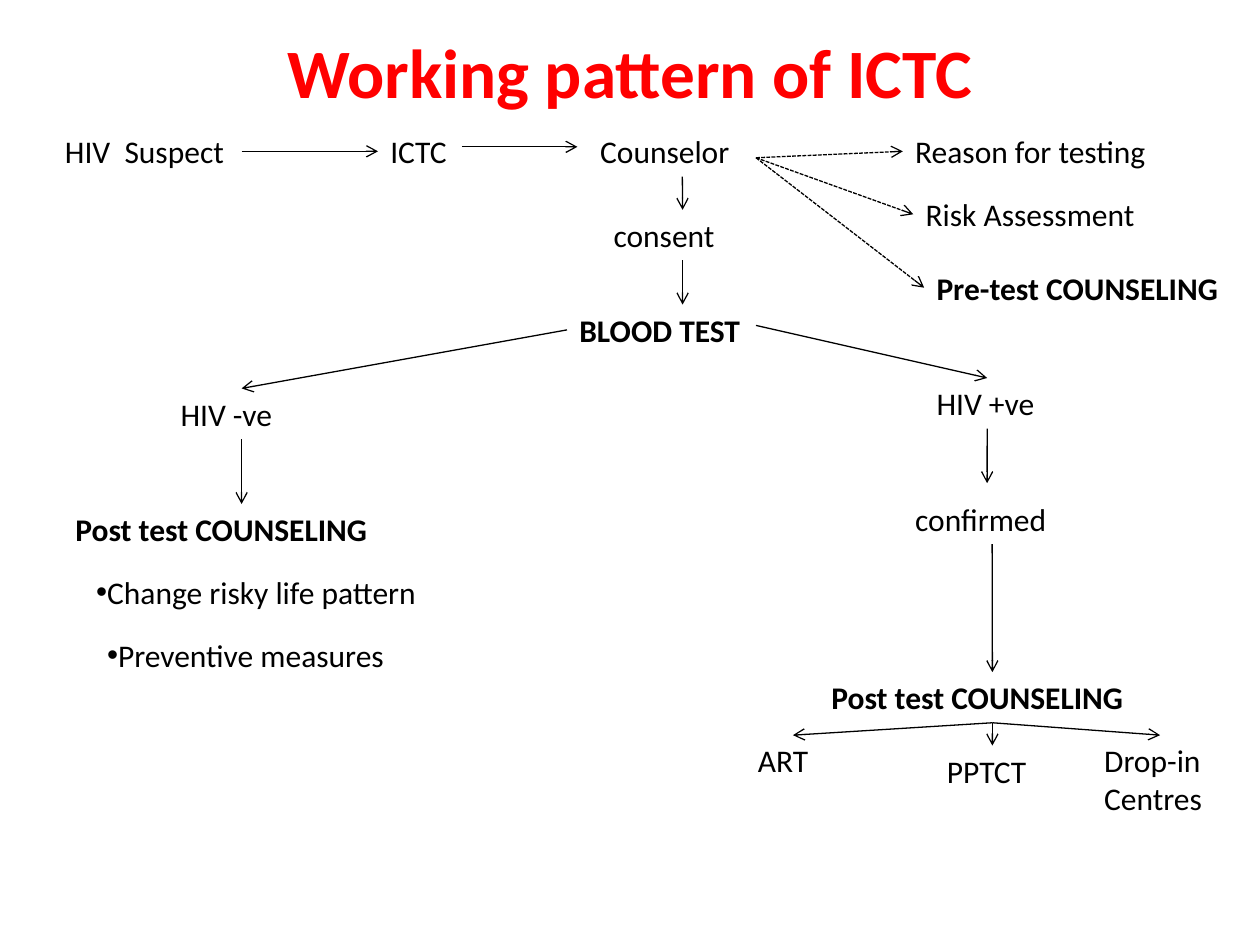
"""Build the flow chart slide on the working pattern of an ICTC."""
import pptx
import pptx.dml.color
import pptx.enum.dml
import pptx.enum.shapes
import pptx.enum.text
import pptx.oxml
import pptx.oxml.ns
import pptx.util

Cm = pptx.util.Cm
Pt = pptx.util.Pt
COLOURS = {"title": "FF0000", "ink": "000000"}
TOP, LEFT, BOTTOM, RIGHT = range(4)
STEP_HEIGHT = 1.02

TITLE = "Working pattern of ICTC"
STEPS = {
    "suspect": ("HIV  Suspect", 1.06, 2.54, 3.81),
    "ictc": ("ICTC", 7.62, 2.54, 2.12),
    "counselor": ("Counselor", 11.85, 2.54, 3.81),
    "reason": ("Reason for testing", 18.2, 2.54, 5.93),
    "risk": ("Risk Assessment", 18.41, 3.81, 6.14),
    "pretest": ("Pre-test COUNSELING", 18.63, 5.29, 6.77),
    "consent": ("consent", 12.12, 4.23, 3.28),
    "blood": ("BLOOD TEST", 11.43, 6.14, 4.66),
    "negative": ("HIV -ve", 3.39, 7.83, 2.96),
    "negative advice": ("Post test COUNSELING", 1.27, 10.16, 7.2),
    "change": ("Change risky life pattern", 1.69, 11.43, 6.99),
    "prevention": ("Preventive measures", 1.91, 12.7, 6.99),
    "positive": ("HIV +ve", 18.63, 7.62, 2.54),
    "confirmed": ("confirmed", 18.2, 9.95, 3.6),
    "positive advice": ("Post test COUNSELING", 16.51, 13.55, 6.99),
    "art": ("ART", 15.03, 14.82, 1.91),
    "pptct": ("PPTCT", 18.84, 15.03, 2.33),
    "centres": ("Drop-in Centres", 22.01, 14.82, 2.75),
}
BOLD = {"pretest", "blood", "negative advice", "positive advice"}
BULLETED = {"change", "prevention"}
HEIGHTS = {"centres": 1.8}

FAN_START = (15.24, 3.18)
SOLID_ARROWS = [
    (("suspect", RIGHT), ("ictc", LEFT)),
    ((9.31, 2.96), (11.64, 2.96)),
    (("counselor", BOTTOM), ("consent", TOP)),
    (("consent", BOTTOM), ("blood", TOP)),
    (("blood", LEFT), ("negative", TOP)),
    ((15.24, 6.56), ("positive", TOP)),
    (("negative", BOTTOM), ("negative advice", TOP)),
    (("positive", BOTTOM), (19.9, 9.74)),
    (("confirmed", BOTTOM), ("positive advice", TOP)),
] + [(("positive advice", BOTTOM), (service, TOP)) for service in ("pptct", "art", "centres")]
DASHED_ARROWS = [(FAN_START, (topic, LEFT)) for topic in ("reason", "risk", "pretest")]


def write(frame, text, colour, **font_format):
    """Put one formatted paragraph in a text frame and return it."""
    frame.word_wrap = True
    paragraph = frame.paragraphs[0]
    run = paragraph.add_run()
    run.text = text
    for attribute, value in {"name": "Calibri", **font_format}.items():
        setattr(run.font, attribute, value)
    run.font.color.rgb = pptx.dml.color.RGBColor.from_string(COLOURS[colour])
    return paragraph


def add_step(slide, key):
    """Add the text of one step."""
    text, left, top, width = STEPS[key]
    height = HEIGHTS.get(key, STEP_HEIGHT)
    step = slide.shapes.add_textbox(Cm(left), Cm(top), Cm(width), Cm(height))
    paragraph = write(step.text_frame, text, "ink", size=Pt(18), bold=key in BOLD)
    step.text_frame.auto_size = pptx.enum.text.MSO_AUTO_SIZE.SHAPE_TO_FIT_TEXT
    if key in BULLETED:
        paragraph.alignment = pptx.enum.text.PP_ALIGN.JUSTIFY
        properties = paragraph._p.get_or_add_pPr()
        for tag, attribute, value in (("buFont", "typeface", "Arial"), ("buChar", "char", "•")):
            bullet = pptx.oxml.ns.qn(f"a:{tag}")
            properties.append(properties.makeelement(bullet, {attribute: value}))
    return step


def add_arrow(slide, steps, start, end, dash=None):
    """Add an arrow between free points or the sides of steps."""
    points = [(0, 0) if point[0] in steps else point for point in (start, end)]
    arrow = slide.shapes.add_connector(
        pptx.enum.shapes.MSO_CONNECTOR.STRAIGHT,
        *(Cm(length) for point in points for length in point))
    for point, join in ((start, arrow.begin_connect), (end, arrow.end_connect)):
        if point[0] in steps:
            join(steps[point[0]], point[1])
    arrow.line.color.rgb = pptx.dml.color.RGBColor.from_string(COLOURS["ink"])
    for attribute, value in {"width": Pt(0.75), "dash_style": dash}.items():
        setattr(arrow.line, attribute, value)
    outline = arrow.line._get_or_add_ln()
    outline.append(outline.makeelement(pptx.oxml.ns.qn("a:tailEnd"), {"type": "arrow"}))
    properties = arrow._element.spPr
    properties.append(properties.makeelement(pptx.oxml.ns.qn("a:effectLst"), {}))


def main():
    """Build and save the slide."""
    deck = pptx.Presentation()
    deck.slide_width, deck.slide_height = Cm(25.4), Cm(19.05)
    slide = deck.slides.add_slide(deck.slide_layouts[5])
    title = slide.shapes.title
    for attribute, value in {"left": 1.27, "top": 0.76, "width": 22.86, "height": 1.35}.items():
        setattr(title, attribute, Cm(value))
    heading = write(title.text_frame, TITLE, "title", size=Pt(39.6), bold=True)
    heading.alignment = pptx.enum.text.PP_ALIGN.CENTER
    title.text_frame.vertical_anchor = pptx.enum.text.MSO_ANCHOR.MIDDLE
    title.text_frame.auto_size = pptx.enum.text.MSO_AUTO_SIZE.NONE

    steps = {key: add_step(slide, key) for key in STEPS}
    for start, end in SOLID_ARROWS:
        add_arrow(slide, steps, start, end)
    for start, end in DASHED_ARROWS:
        add_arrow(slide, steps, start, end, pptx.enum.dml.MSO_LINE.SQUARE_DOT)
    deck.save("out.pptx")


if __name__ == "__main__":
    main()
